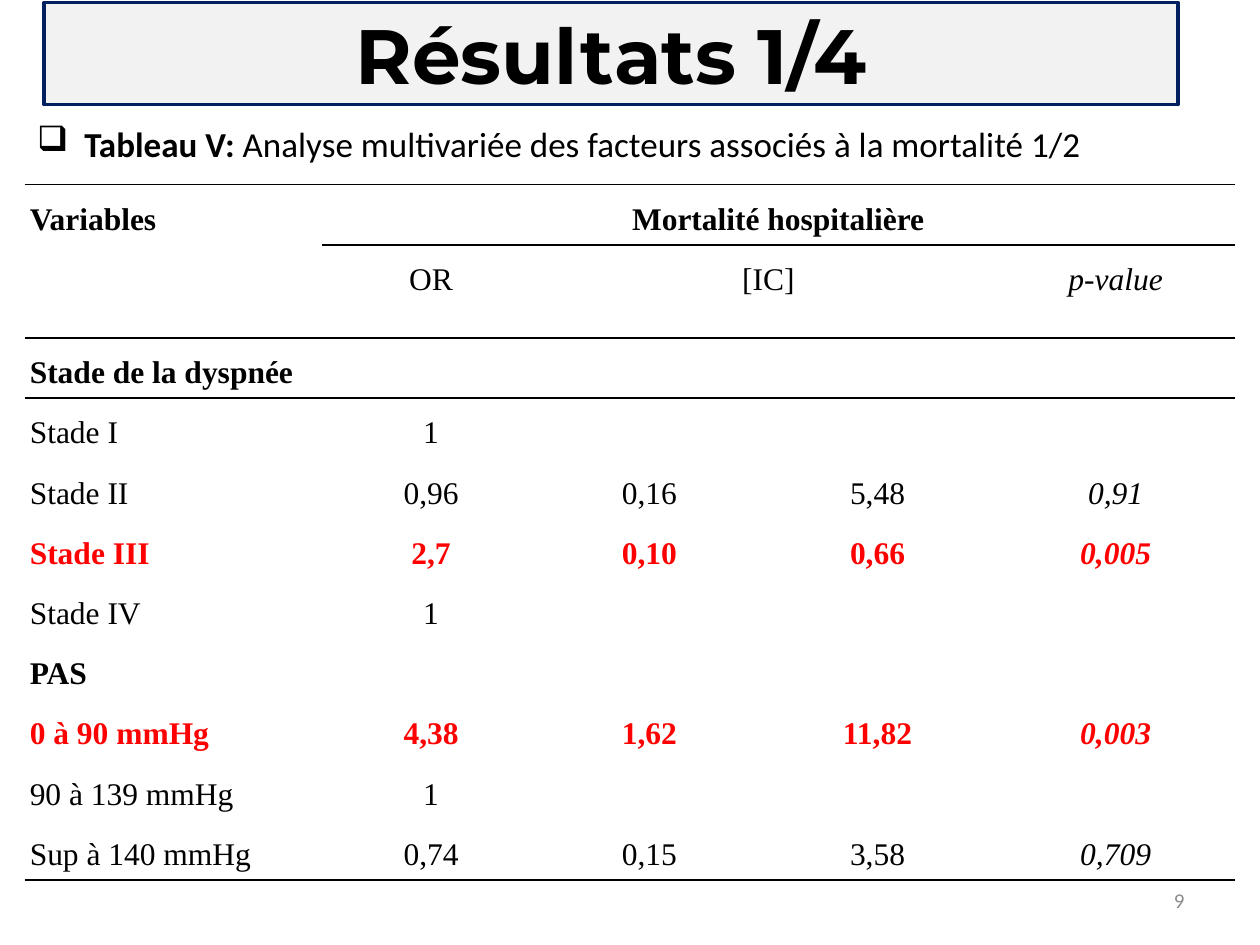
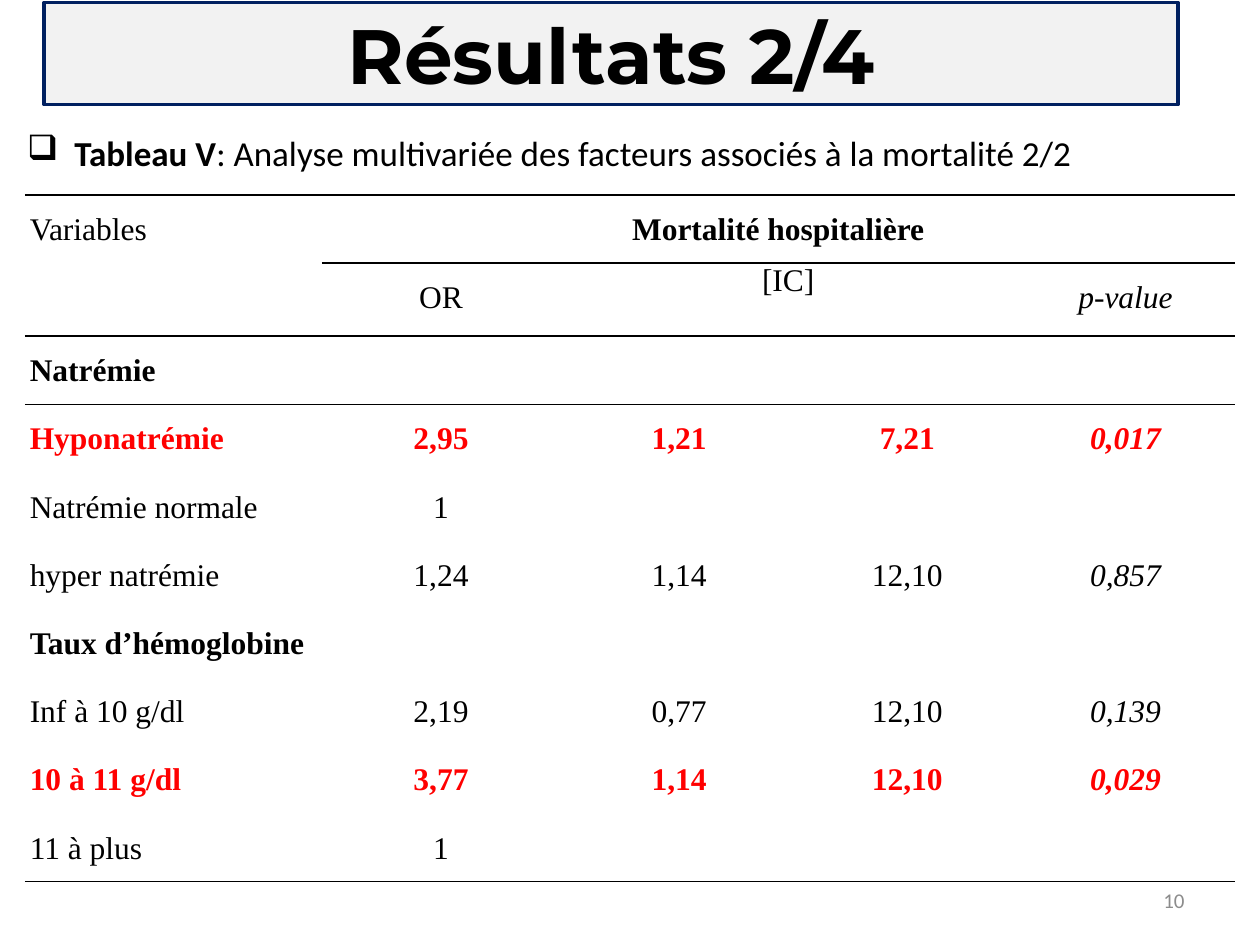
from lxml.etree import SubElement
from pptx import Presentation
from pptx.dml.color import RGBColor
from pptx.enum.shapes import MSO_SHAPE
from pptx.enum.text import MSO_ANCHOR, PP_ALIGN
from pptx.oxml.ns import qn
from pptx.util import Cm, Pt

BLACK = RGBColor(0x00, 0x00, 0x00)
WHITE = RGBColor(0xFF, 0xFF, 0xFF)
RED = RGBColor(0xFF, 0x00, 0x00)
NAVY = RGBColor(0x00, 0x20, 0x60)
BAND_GREY = RGBColor(0xF2, 0xF2, 0xF2)
NUMBER_GREY = RGBColor(0x8C, 0x8C, 0x8C)

TITLE = {"name": "Montserrat", "size": Pt(44), "bold": True}
CAPTION = {"name": "Calibri", "size": Pt(20)}
PAGE_NUMBER = {"name": "Calibri", "size": Pt(12)}
TABLE_TEXT = {"name": "Times New Roman", "size": Pt(18)}

PLAIN_TABLE_STYLE = "{2D5ABB26-0587-4C30-8999-92F81FD0307C}"
LABEL_WIDTH, NARROW, WIDE = Cm(5.99), Cm(4.4), Cm(4.8)

# Kinds of table row: (bold, colour)
GROUP = (True, BLACK)
PLAIN = (False, BLACK)
SIGNIFICANT = (True, RED)

DYSPNEA_AND_PRESSURE = [
    (GROUP, "Stade de la dyspnée"),
    (PLAIN, "Stade I", "1"),
    (PLAIN, "Stade II", "0,96", "0,16", "5,48", "0,91"),
    (SIGNIFICANT, "Stade III", "2,7", "0,10", "0,66", "0,005"),
    (PLAIN, "Stade IV", "1"),
    (GROUP, "PAS"),
    (SIGNIFICANT, "0 à 90 mmHg", "4,38", "1,62", "11,82", "0,003"),
    (PLAIN, "90 à 139 mmHg", "1"),
    (PLAIN, "Sup à 140 mmHg", "0,74", "0,15", "3,58", "0,709"),
]
SODIUM_AND_HEMOGLOBIN = [
    (GROUP, "Natrémie"),
    (SIGNIFICANT, "Hyponatrémie", "2,95", "1,21", "7,21", "0,017"),
    (PLAIN, "Natrémie normale", "1"),
    (PLAIN, "hyper natrémie", "1,24", "1,14", "12,10", "0,857"),
    (GROUP, "Taux d’hémoglobine"),
    (PLAIN, "Inf à 10 g/dl", "2,19", "0,77", "12,10", "0,139"),
    (SIGNIFICANT, "10 à 11 g/dl", "3,77", "1,14", "12,10", "0,029"),
    (PLAIN, "11 à plus", "1"),
]


def add_span(para, text, style, color=BLACK, **extra):
    span = para.add_run()
    span.text = text
    for attribute, value in {**style, **extra}.items():
        setattr(span.font, attribute, value)
    span.font.color.rgb = color


def add_title_band(page, text):
    band = page.shapes.add_shape(MSO_SHAPE.RECTANGLE, Cm(0.89), Cm(0.05), Cm(22.86), Cm(2.06))
    band.shadow.inherit = False
    band.fill.solid()
    band.fill.fore_color.rgb = BAND_GREY
    band.line.color.rgb = NAVY
    band.line.width = Pt(2)
    band.text_frame.vertical_anchor = MSO_ANCHOR.MIDDLE
    para = band.text_frame.paragraphs[0]
    para.alignment = PP_ALIGN.CENTER
    add_span(para, text, TITLE)


def add_text_box(page, left, top, width, height):
    box = page.shapes.add_textbox(left, top, width, height)
    box.text_frame.word_wrap = True
    return box.text_frame


def add_caption(page, left, top, width, label, text):
    para = add_text_box(page, left, top, width, Cm(16.2)).paragraphs[0]
    properties = para._p.get_or_add_pPr()
    properties.set("marL", str(Cm(0.95)))
    properties.set("indent", str(-Cm(0.95)))
    SubElement(properties, qn("a:buChar")).set("char", "❑")
    add_span(para, label, CAPTION, bold=True)
    add_span(para, text, CAPTION)


def add_page_number(page, number):
    frame = add_text_box(page, Cm(18.2), Cm(17.65), Cm(5.93), Cm(1.01))
    frame.vertical_anchor = MSO_ANCHOR.MIDDLE
    para = frame.paragraphs[0]
    para.alignment = PP_ALIGN.RIGHT
    add_span(para, str(number), PAGE_NUMBER, NUMBER_GREY)


def add_rule(cell, edge):
    """Draw a thin black line on one edge of a cell: lnT or lnB."""
    line = SubElement(cell._tc.get_or_add_tcPr(), qn(f"a:{edge}"), w=str(Pt(1)))
    fill = SubElement(line, qn("a:solidFill"))
    SubElement(fill, qn("a:srgbClr"), val=str(BLACK))


def write_cell(cell, text, kind=PLAIN, align=PP_ALIGN.CENTER, spacing=1.5, italic=False):
    bold, color = kind
    para = cell.text_frame.paragraphs[0]
    para.alignment = align
    para.line_spacing = spacing
    add_span(para, text, TABLE_TEXT, color, bold=bold, italic=italic)


def prepare_cells(table):
    """Set margins, white fill and the lines around the two header rows and the foot."""
    last = len(table.rows) - 1
    margins = {"margin_left": Cm(0.1), "margin_right": Cm(0.1), "margin_top": 0, "margin_bottom": 0}
    for row_index, row in enumerate(table.rows):
        for column_index, cell in enumerate(row.cells):
            for attribute, value in margins.items():
                setattr(cell, attribute, value)
            if row_index <= 2 and (row_index, column_index) != (1, 0):
                add_rule(cell, "lnT")
            if row_index in (0, 1, last):
                add_rule(cell, "lnB")
            cell.fill.solid()
            cell.fill.fore_color.rgb = WHITE


def write_header(table, variables_kind, interval_spacing):
    table.cell(0, 0).merge(table.cell(1, 0))
    table.cell(0, 1).merge(table.cell(0, 4))
    table.cell(1, 2).merge(table.cell(1, 3))
    write_cell(table.cell(0, 0), "Variables", variables_kind, PP_ALIGN.JUSTIFY)
    write_cell(table.cell(0, 1), "Mortalité hospitalière", GROUP)
    write_cell(table.cell(1, 1), "OR")
    write_cell(table.cell(1, 2), "[IC]", spacing=interval_spacing)
    write_cell(table.cell(1, 4), "p-value", italic=True)


def add_odds_table(page, top, height, subheader_height, value_widths, records,
                   variables_kind, interval_spacing):
    widths = [LABEL_WIDTH, *value_widths]
    row_count = len(records) + 2
    frame = page.shapes.add_table(row_count, len(widths), Cm(0.5), top, sum(widths), height)
    next(frame._element.iter(qn("a:tableStyleId"))).text = PLAIN_TABLE_STYLE
    table = frame.table
    table.first_row = table.horz_banding = False
    for column, width in zip(table.columns, widths):
        column.width = width
    for row in table.rows:
        row.height = (height - subheader_height) // (row_count - 1)
    table.rows[1].height = subheader_height

    prepare_cells(table)
    write_header(table, variables_kind, interval_spacing)
    for row_index, (kind, label, *values) in enumerate(records, start=2):
        write_cell(table.cell(row_index, 0), label, kind, PP_ALIGN.JUSTIFY)
        for column_index, value in enumerate(values, start=1):
            write_cell(table.cell(row_index, column_index), value, kind, italic=column_index == 4)


def add_page(deck, title, number):
    page = deck.slides.add_slide(deck.slide_layouts[6])
    add_title_band(page, title)
    add_page_number(page, number)
    return page


def main():
    deck = Presentation()
    deck.slide_width, deck.slide_height = Cm(25.4), Cm(19.05)

    page = add_page(deck, "Résultats 1/4", 9)
    add_caption(page, Cm(0.5), Cm(2.34), Cm(24.2), "Tableau V:",
                " Analyse multivariée des facteurs associés à la mortalité 1/2")
    add_odds_table(page, Cm(3.72), Cm(14.02), Cm(1.88), [NARROW, NARROW, WIDE, WIDE],
                   DYSPNEA_AND_PRESSURE, GROUP, 1.5)

    page = add_page(deck, "Résultats 2/4", 10)
    add_caption(page, Cm(0.3), Cm(2.52), Cm(24.8), "Tableau V",
                ": Analyse multivariée des facteurs associés à la mortalité 2/2")
    add_odds_table(page, Cm(3.93), Cm(13.85), Cm(1.47), [WIDE, WIDE, NARROW, NARROW],
                   SODIUM_AND_HEMOGLOBIN, PLAIN, 1.0)

    deck.save("out.pptx")


if __name__ == "__main__":
    main()
